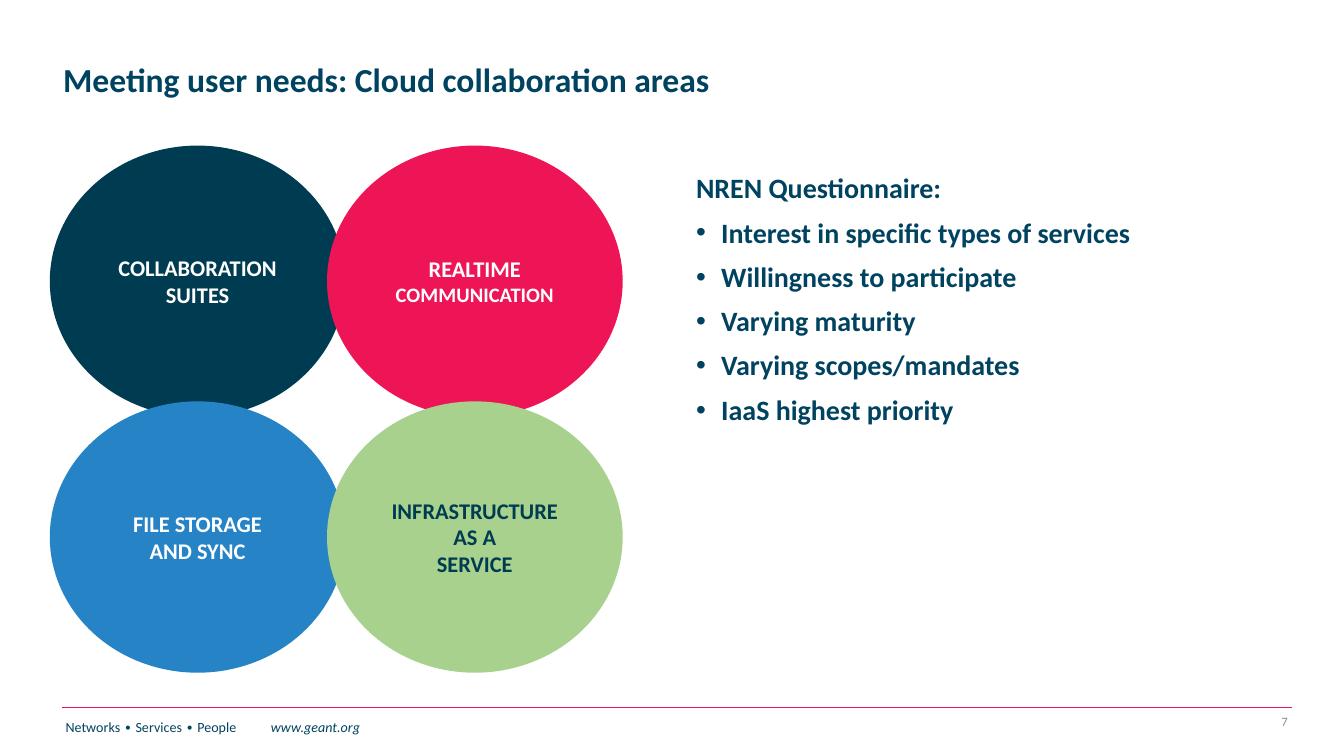
from dataclasses import dataclass

from lxml import etree
from pptx import Presentation
from pptx import util as u
from pptx.dml import color
from pptx.enum import shapes, text
from pptx.oxml import ns

FONT = "Calibri"
NAVY = "004361"
PINK = "ED1556"
DEEP_TEAL = "003C51"
WHITE = "FFFFFF"

CIRCLE_LEFT, CIRCLE_TOP = 26.7, 78
CIRCLE_WIDTH, CIRCLE_HEIGHT = 158.4, 145.4
COLUMN_STEP, ROW_STEP = 148.5, 137
BULLET_INDENT = 13.5


@dataclass
class Area:
    column: int
    row: int
    fill: str
    lines: list[str]
    ink: str = WHITE
    last_size: float = 12


AREAS = [
    Area(0, 0, DEEP_TEAL, ["COLLABORATION", "SUITES"]),
    Area(1, 0, PINK, ["REALTIME", "COMMUNICATION"], last_size=11),
    Area(0, 1, "2683C6", ["FILE STORAGE", "AND SYNC"]),
    Area(1, 1, "A9D18E", ["INFRASTRUCTURE", "AS A", "SERVICE"], DEEP_TEAL),
]

FINDINGS = [
    "Interest in specific types of services",
    "Willingness to participate",
    "Varying maturity",
    "Varying scopes/mandates",
    "IaaS highest priority",
]


def rgb(value: str) -> color.RGBColor:
    return color.RGBColor.from_string(value)


def style(paragraph, size: float, ink: str, bold: bool = False) -> None:
    paragraph.font.name = FONT
    paragraph.font.size = u.Pt(size)
    paragraph.font.bold = bold
    paragraph.font.color.rgb = rgb(ink)


def add_box(slide, left: float, top: float, width: float, height: float,
            anchor=text.MSO_ANCHOR.TOP):
    box = slide.shapes.add_textbox(u.Pt(left), u.Pt(top), u.Pt(width), u.Pt(height))
    box.text_frame.word_wrap = True
    box.text_frame.vertical_anchor = anchor
    return box.text_frame


def add_bullet(paragraph) -> None:
    properties = paragraph._p.get_or_add_pPr()
    properties.set("marL", str(u.Pt(BULLET_INDENT)))
    properties.set("indent", str(-u.Pt(BULLET_INDENT)))
    etree.SubElement(properties, ns.qn("a:buFont"), typeface="Arial")
    etree.SubElement(properties, ns.qn("a:buChar"), char="•")


def add_title(slide) -> None:
    frame = add_box(slide, 26.7, 4.3, 567.4, 78.5, text.MSO_ANCHOR.MIDDLE)
    paragraph = frame.paragraphs[0]
    paragraph.text = "Meeting user needs: Cloud collaboration areas"
    paragraph.line_spacing = 0.9
    style(paragraph, 18, NAVY, bold=True)


def add_questionnaire(slide) -> None:
    frame = add_box(slide, 365.8, 90, 336.2, 275)
    heading = frame.paragraphs[0]
    heading.text = "NREN Questionnaire:"
    for finding in FINDINGS:
        paragraph = frame.add_paragraph()
        paragraph.text = finding
        paragraph.space_before = u.Pt(7.5)
        add_bullet(paragraph)
    for paragraph in frame.paragraphs:
        paragraph.line_spacing = 0.9
        style(paragraph, 15, "004360", bold=True)


def add_area(slide, area: Area) -> None:
    shape = slide.shapes.add_shape(
        shapes.MSO_SHAPE.OVAL,
        u.Pt(CIRCLE_LEFT + area.column * COLUMN_STEP),
        u.Pt(CIRCLE_TOP + area.row * ROW_STEP),
        u.Pt(CIRCLE_WIDTH), u.Pt(CIRCLE_HEIGHT))
    shape.shadow.inherit = False
    shape.fill.solid()
    shape.fill.fore_color.rgb = rgb(area.fill)
    shape.line.fill.background()
    frame = shape.text_frame
    frame.word_wrap = True
    frame.vertical_anchor = text.MSO_ANCHOR.MIDDLE
    frame.margin_left = frame.margin_right = u.Pt(9)
    frame.margin_top = frame.margin_bottom = u.Pt(5)
    frame.text = "\n".join(area.lines)
    for paragraph in frame.paragraphs:
        paragraph.alignment = text.PP_ALIGN.CENTER
        style(paragraph, 12, area.ink, bold=True)
    frame.paragraphs[-1].font.size = u.Pt(area.last_size)


def add_footer(slide) -> None:
    rule = slide.shapes.add_connector(
        shapes.MSO_CONNECTOR.STRAIGHT, u.Pt(33.5), u.Pt(379), u.Pt(692), u.Pt(379))
    rule.line.color.rgb = rgb(PINK)
    rule.line.width = u.Pt(1)
    etree.SubElement(rule._element.spPr, ns.qn("a:effectLst"))

    paragraph = add_box(slide, 28, 381.6, 245.5, 25).paragraphs[0]
    tabs = etree.SubElement(paragraph._p.get_or_add_pPr(), ns.qn("a:tabLst"))
    etree.SubElement(tabs, ns.qn("a:tab"), pos=str(u.Pt(110)), algn="l")
    paragraph.add_run().text = "Networks ∙ Services ∙ People\t"
    address = paragraph.add_run()
    address.text = "www.geant.org"
    address.font.italic = True
    style(paragraph, 7.5, NAVY)

    number = add_box(slide, 653, 378, 44, 16.6, text.MSO_ANCHOR.MIDDLE).paragraphs[0]
    number.text = "7"
    number.alignment = text.PP_ALIGN.RIGHT
    style(number, 6.8, "8C8C8C")


def main() -> None:
    presentation = Presentation()
    presentation.slide_width = u.Pt(720)
    presentation.slide_height = u.Pt(405)
    slide = presentation.slides.add_slide(presentation.slide_layouts[6])
    add_footer(slide)
    add_questionnaire(slide)
    add_title(slide)
    for area in AREAS:
        add_area(slide, area)
    presentation.save("out.pptx")


if __name__ == "__main__":
    main()
